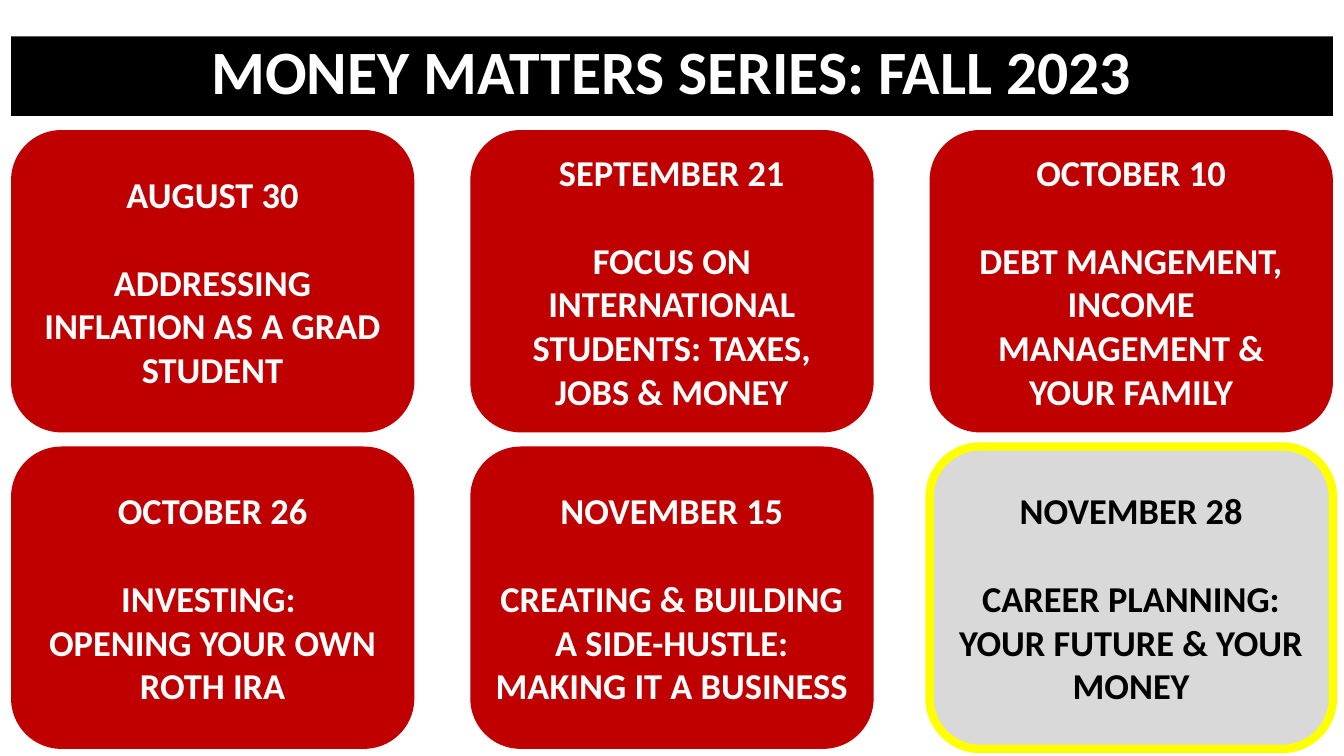
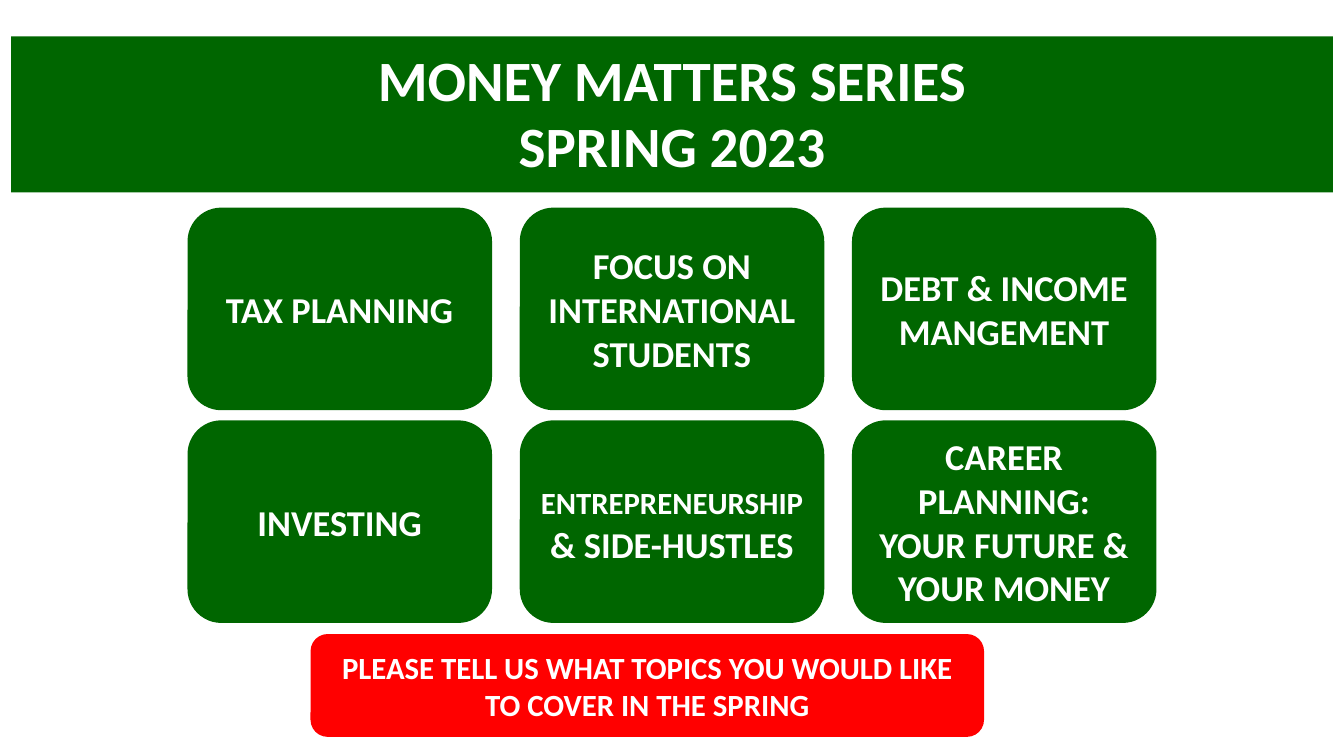
from dataclasses import dataclass
from pptx import Presentation
from pptx.dml.color import RGBColor as Rgb
from pptx.enum.shapes import MSO_SHAPE as Kind
from pptx.enum.text import MSO_ANCHOR as Anchor, MSO_AUTO_SIZE as Fit, PP_ALIGN as Align
from pptx.util import Inches, Pt


@dataclass(frozen=True)
class Theme:
    font: str = "Calibri"
    white: str = "FFFFFF"
    black: str = "000000"
    red: str = "C00000"
    alert: str = "FF0000"
    green: str = "006600"
    grey: str = "D9D9D9"
    yellow: str = "FFFF00"
    title: float = 44
    pair: float = 40.7
    card: float = 26
    small: float = 22
    gap: float = 31.7
    edge: float = 6


@dataclass(frozen=True)
class Box:
    left: float
    top: float
    width: float
    height: float

    def place(self, shape):
        shape.left, shape.top = Inches(self.left), Inches(self.top)
        shape.width, shape.height = Inches(self.width), Inches(self.height)

    def grid(self, wide, high, cols=3, rows=2):
        across = (self.width - wide) / (cols - 1)
        down = (self.height - high) / (rows - 1)
        return [Box(self.left + col * across, self.top + row * down, wide, high)
                for row in range(rows) for col in range(cols)]


T = Theme()

FALL = [
    ("AUGUST 30", "ADDRESSING INFLATION AS A GRAD STUDENT"),
    ("SEPTEMBER 21", "FOCUS ON INTERNATIONAL STUDENTS: TAXES, JOBS & MONEY"),
    ("OCTOBER 10", "DEBT MANGEMENT, INCOME MANAGEMENT & YOUR FAMILY"),
    ("OCTOBER 26", "INVESTING: \vOPENING YOUR OWN ROTH IRA"),
    ("NOVEMBER 15", "CREATING & BUILDING A SIDE-HUSTLE: MAKING IT A BUSINESS"),
    ("NOVEMBER 28", "CAREER PLANNING: YOUR FUTURE & YOUR MONEY"),
]
SPRING = [
    "TAX PLANNING",
    "FOCUS ON INTERNATIONAL STUDENTS",
    "DEBT & INCOME MANGEMENT",
    "INVESTING",
    "ENTREPRENEURSHIP & SIDE-HUSTLES",
    "CAREER PLANNING: YOUR FUTURE & YOUR MONEY",
]
LONG = "ENTREPRENEURSHIP"


def paint(shape, fill):
    shape.fill.solid()
    shape.fill.fore_color.rgb = Rgb.from_string(fill)


def style(run, size, ink):
    font = run.font
    font.name, font.size, font.bold = T.font, Pt(size), True
    font.color.rgb = Rgb.from_string(ink)


def write(frame, lines, size, ink, gap):
    frame.text = "\n".join(lines)
    frame.word_wrap = True
    for place, para in enumerate(frame.paragraphs):
        para.alignment = Align.CENTER
        if place:
            para.space_before = Pt(gap)
        for run in para.runs:
            style(run, size, ink)


def band(slide, box, lines, fill, size, pace, inset=0.05):
    title = slide.shapes.title
    box.place(title)
    paint(title, fill)
    frame = title.text_frame
    write(frame, lines, size, T.white, 8)
    frame.auto_size = Fit.NONE
    frame.vertical_anchor = Anchor.TOP
    frame.margin_top = Inches(inset)
    for para in frame.paragraphs:
        para.line_spacing = pace


def card(slide, box, lines, fill, size=T.card, ink=T.white):
    shape = slide.shapes.add_shape(Kind.ROUNDED_RECTANGLE, 0, 0, 0, 0)
    box.place(shape)
    shape.shadow.inherit = False
    paint(shape, fill)
    shape.line.fill.background()
    shape.text_frame.vertical_anchor = Anchor.MIDDLE
    write(shape.text_frame, lines, size, ink, T.gap)
    return shape


def fall(slide, box):
    band(slide, Box(box.left, box.top, box.width, 0.79),
         ["MONEY MATTERS SERIES: FALL 2023"], T.black, T.title, 0.9)
    area = Box(box.left, box.top + 0.93, box.width, 6.14)
    cells = list(zip(area.grid(4, 3), FALL))
    for cell, lines in cells[:-1]:
        card(slide, cell, lines, T.red)
    cell, lines = cells[-1]
    last = card(slide, cell, lines, T.grey, ink=T.black)
    last.line.color.rgb = Rgb.from_string(T.yellow)
    last.line.width = Pt(T.edge)


def spring(slide, box):
    band(slide, Box(box.left, box.top, box.width, 1.55),
         ["MONEY MATTERS SERIES", "SPRING 2023"], T.green, T.pair, 0.8, 0.21)
    area = Box(box.left + 1.75, box.top + 1.7, 9.61, 4.12)
    for cell, topic in zip(area.grid(3.02, 2.01), SPRING):
        shape = card(slide, cell, [topic], T.green)
        if topic.startswith(LONG):
            para = shape.text_frame.paragraphs[0]
            para.runs[0].text = LONG
            style(para.runs[0], T.small, T.white)
            rest = para.add_run()
            rest.text = topic[len(LONG):]
            style(rest, T.card, T.white)
    card(slide, Box(box.left + 2.97, box.top + 5.93, 6.68, 1.02),
         ["PLEASE TELL US WHAT TOPICS YOU WOULD LIKE TO COVER IN THE SPRING"],
         T.alert, T.small)


def main():
    deck = Presentation()
    deck.slide_width, deck.slide_height = Inches(13.33), Inches(7.5)
    page = Box(0.11, 0.36, 13.11, 7.07)
    for build in (fall, spring):
        build(deck.slides.add_slide(deck.slide_layouts[5]), page)
    deck.save("out.pptx")


if __name__ == "__main__":
    main()
